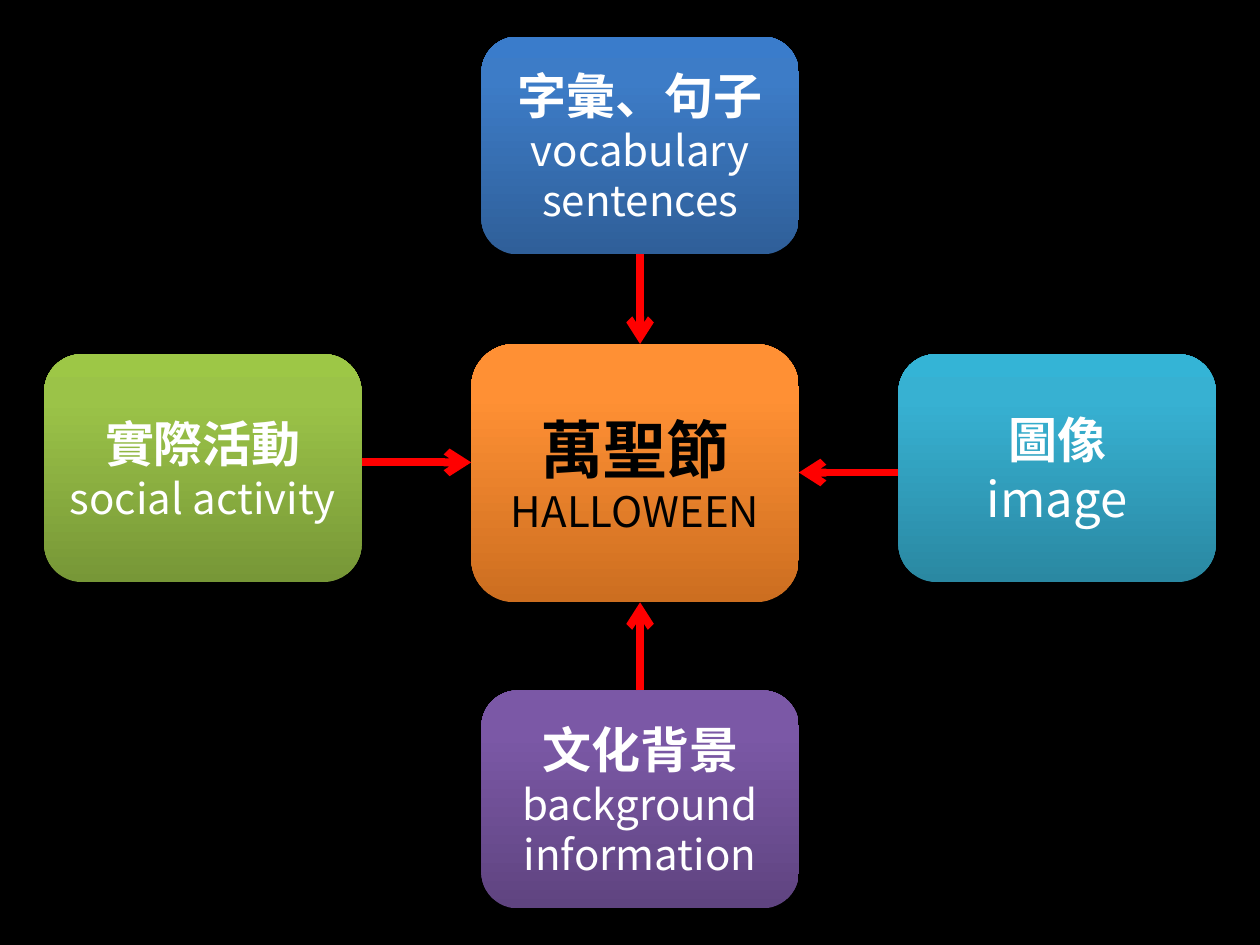
from copy import deepcopy

from pptx import Presentation
from pptx.dml.color import RGBColor
from pptx.enum.shapes import MSO_CONNECTOR, MSO_SHAPE
from pptx.enum.text import MSO_ANCHOR, PP_ALIGN
from pptx.oxml.ns import qn
from pptx.util import Inches, Pt
from lxml.etree import SubElement

FONT = "Noto Sans CJK SC"
COLORS = {"background": "000000", "white": "FFFFFF", "black": "000000", "arrow": "FF0000"}

# Gradient colours from the bottom edge to the top edge
GRADIENTS = {
    "purple": ("5F4480", "7B58A6", "7C57A8"),
    "blue": ("2F5F99", "3D7CC7", "3A7CCB"),
    "teal": ("2A88A2", "37B1D2", "34B4D6"),
    "green": ("779737", "9BC348", "9DC746"),
    "orange": ("CC6E20", "FF9034", "FF9136"),
}
STOP_POSITIONS = (0, 0.8, 1)


def write_text(paragraph, text, size, color, bold=False):
    paragraph.alignment = PP_ALIGN.CENTER
    run = paragraph.add_run()
    run.text = text
    font = run.font
    font.size = Pt(size)
    font.bold = bold
    font.color.rgb = RGBColor.from_string(COLORS[color])
    font.name = FONT
    SubElement(font._element, qn("a:ea"), typeface=FONT)


class MindMap:
    def __init__(self, presentation):
        self.slide = presentation.slides.add_slide(presentation.slide_layouts[6])
        fill = self.slide.background.fill
        fill.solid()
        fill.fore_color.rgb = RGBColor.from_string(COLORS["background"])

    def fill_gradient(self, fill, colors):
        fill.gradient()
        fill.gradient_angle = 90
        # The default gradient has two stops; add the third
        stop_list = fill._xPr.find(qn("a:gradFill")).find(qn("a:gsLst"))
        stop_list.append(deepcopy(stop_list[-1]))
        for stop, position, color in zip(fill.gradient_stops, STOP_POSITIONS, colors):
            stop.position = position
            stop.color.rgb = RGBColor.from_string(color)

    def box(self, place, gradient, chinese, english, color="white", sizes=(28, 24)):
        shape = self.slide.shapes.add_shape(
            MSO_SHAPE.ROUNDED_RECTANGLE, *[Inches(length) for length in place])
        shape.shadow.inherit = False
        shape.line.fill.background()
        self.fill_gradient(shape.fill, GRADIENTS[gradient])
        frame = shape.text_frame
        frame.word_wrap = True
        frame.vertical_anchor = MSO_ANCHOR.MIDDLE
        write_text(frame.paragraphs[0], chinese, sizes[0], color, bold=True)
        write_text(frame.add_paragraph(), english, sizes[1], color)

    def arrow(self, start, end):
        connector = self.slide.shapes.add_connector(
            MSO_CONNECTOR.STRAIGHT, *[Inches(length) for length in start + end])
        connector.line.color.rgb = RGBColor.from_string(COLORS["arrow"])
        connector.line.width = Pt(4.5)
        SubElement(connector.line._get_or_add_ln(), qn("a:tailEnd"), type="arrow")
        SubElement(connector._element.spPr, qn("a:effectLst"))


def main():
    presentation = Presentation()
    presentation.slide_width = Inches(10)
    presentation.slide_height = Inches(7.5)
    mind_map = MindMap(presentation)

    # Topics around the centre
    width, tall, short = 2.52, 1.81, 1.73
    column, row = 3.82, 2.81
    left, right, top, bottom = 0.35, 7.13, 0.29, 5.48
    mind_map.box((column, bottom, width, short), "purple", "文化背景", "background information")
    mind_map.box((column, top, width, short), "blue", "字彙、句子", "vocabulary sentences")
    mind_map.box((right, row, width, tall), "teal", "圖像", "image", sizes=(28, 28))
    mind_map.box((left, row, width, tall), "green", "實際活動", "social activity")

    # Central theme
    center_left, center_top, center_width, center_height = 3.74, 2.73, 2.6, 2.05
    mind_map.box((center_left, center_top, center_width, center_height), "orange",
                 "萬聖節", "HALLOWEEN", color="black", sizes=(36, 24))

    # Arrows from each topic to the theme
    middle = column + width / 2
    mind_map.arrow((left + width, 3.67), (center_left, 3.67))
    mind_map.arrow((right, 3.75), (center_left + center_width, 3.75))
    mind_map.arrow((middle, bottom), (middle, center_top + center_height))
    mind_map.arrow((middle, top + short), (middle, center_top))

    presentation.save("out.pptx")


if __name__ == "__main__":
    main()
